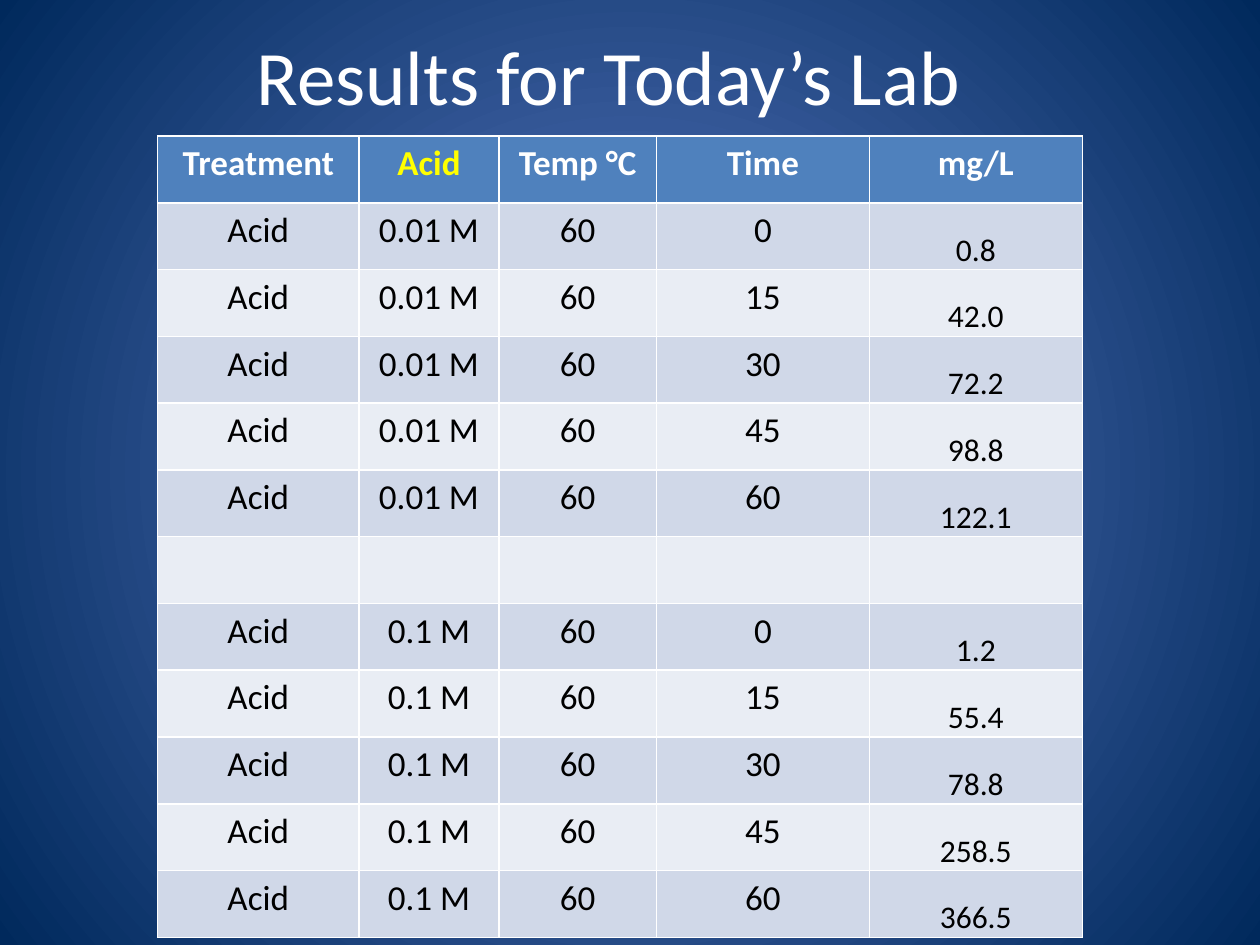
from lxml import etree
from pptx import Presentation
from pptx.dml.color import RGBColor
from pptx.enum.text import MSO_ANCHOR, PP_ALIGN
from pptx.oxml.ns import qn
from pptx.util import Inches, Pt

CENTER = PP_ALIGN.CENTER
MIDDLE, BOTTOM = MSO_ANCHOR.MIDDLE, MSO_ANCHOR.BOTTOM

FONT = "Calibri"
COLORS = {
    "glow": "5E7CC5",
    "navy": "00295C",
    "white": "FFFFFF",
    "black": "000000",
    "yellow": "FFFF00",
    "header": "4F81BD",
    "odd_row": "D0D8E8",
    "even_row": "E9EDF4",
}

HEADERS = ["Treatment", "Acid", "Temp °C", "Time", "mg/L"]
TIMES = [0, 15, 30, 45, 60]
RESULTS = {
    "0.01 M": ["0.8", "42.0", "72.2", "98.8", "122.1"],
    "0.1 M": ["1.2", "55.4", "78.8", "258.5", "366.5"],
}
COLUMN_WIDTHS = [1.6, 1.11, 1.25, 1.69, 1.69]


def rgb(name):
    return RGBColor.from_string(COLORS[name])


def format_paragraph(paragraph, size, color, bold=False):
    paragraph.alignment = CENTER
    font = paragraph.font
    font.name = FONT
    font.size = Pt(size)
    font.bold = bold
    font.color.rgb = rgb(color)


def set_background(slide):
    """Fill the background with a gradient that spreads from the centre."""
    fill = slide.background.fill
    fill.gradient()
    for stop, position, color in zip(fill.gradient_stops, (0, 1), ("glow", "navy")):
        stop.position = position
        stop.color.rgb = rgb(color)
    gradient = slide.element.find(".//" + qn("a:gradFill"))
    gradient.remove(gradient.find(qn("a:lin")))
    circle = etree.SubElement(gradient, qn("a:path"), path="circle")
    etree.SubElement(circle, qn("a:fillToRect"), dict.fromkeys("ltrb", "50000"))


def place_title(slide, left, top, width, height):
    title = slide.shapes.title
    title.left, title.top = Inches(left), Inches(top)
    title.width, title.height = Inches(width), Inches(height)
    title.text_frame.text = "Results for Today’s Lab"
    title.text_frame.vertical_anchor = MIDDLE
    format_paragraph(title.text_frame.paragraphs[0], 44, "white")


def result_rows():
    """Return the header and one block per acid, with an empty row between."""
    rows = [HEADERS]
    for acid, amounts in RESULTS.items():
        if len(rows) > 1:
            rows.append([""] * len(HEADERS))
        rows += [["Acid", acid, "60", str(time), amount]
                 for time, amount in zip(TIMES, amounts)]
    return rows


def fill_cell(cell, text, row, column):
    is_header = row == 0
    is_amount = column == len(HEADERS) - 1 and not is_header and text
    cell.fill.solid()
    band = "odd_row" if row % 2 else "even_row"
    cell.fill.fore_color.rgb = rgb("header" if is_header else band)
    if is_amount:
        cell.vertical_anchor = BOTTOM
        cell.margin_left = cell.margin_right = cell.margin_top = Inches(0.01)
        cell.margin_bottom = 0
    if text:
        color = "white" if is_header else "black"
        if is_header and text == "Acid":
            color = "yellow"
        cell.text = text
        format_paragraph(cell.text_frame.paragraphs[0],
                         18 if is_amount else 20, color, is_header)


def place_results_table(slide, left, top, width, height):
    rows = result_rows()
    table = slide.shapes.add_table(
        len(rows), len(HEADERS),
        Inches(left), Inches(top), Inches(width), Inches(height)).table
    for column, column_width in zip(table.columns, COLUMN_WIDTHS):
        column.width = Inches(column_width)
    for row, texts in enumerate(rows):
        table.rows[row].height = Inches(height / len(rows))
        for column, text in enumerate(texts):
            fill_cell(table.cell(row, column), text, row, column)


def main():
    presentation = Presentation()
    presentation.slide_width, presentation.slide_height = Inches(10), Inches(7.5)
    slide = presentation.slides.add_slide(presentation.slide_layouts[5])
    set_background(slide)
    place_title(slide, 0.33, -0.03, 9, 1.25)
    place_results_table(slide, 1.25, 1.08, sum(COLUMN_WIDTHS), 6.36)
    presentation.save("out.pptx")


if __name__ == "__main__":
    main()
